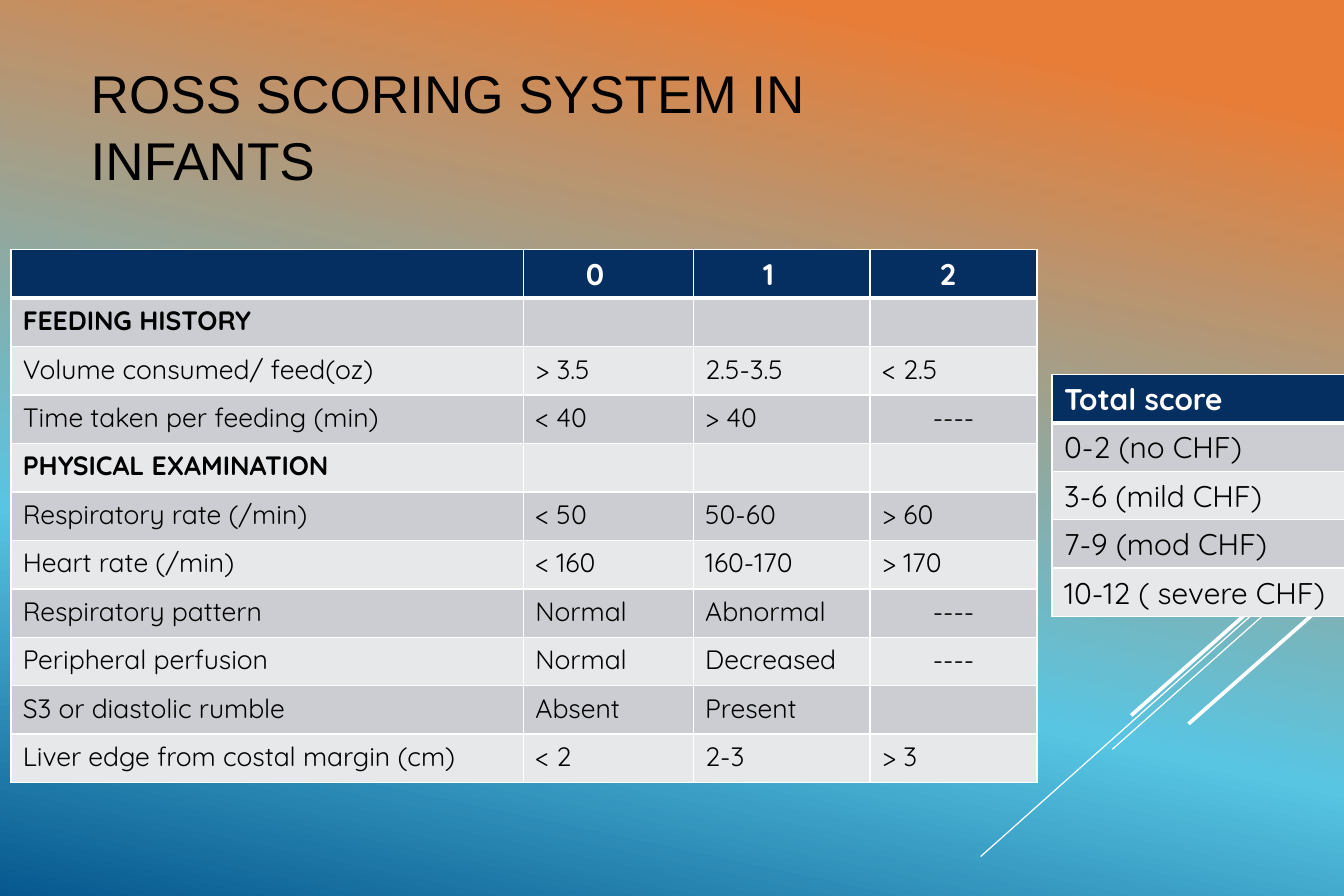
import copy

import lxml.etree
import pptx
import pptx.dml.color
import pptx.enum.shapes
import pptx.enum.text
import pptx.oxml.ns
import pptx.util

Cm = pptx.util.Cm
Pt = pptx.util.Pt
qn = pptx.oxml.ns.qn
RGBColor = pptx.dml.color.RGBColor

WHITE = RGBColor(0xFF, 0xFF, 0xFF)
BLACK = RGBColor(0x00, 0x00, 0x00)
NAVY = RGBColor(0x05, 0x2F, 0x61)
DARK_BAND = RGBColor(0xCC, 0xCD, 0xD2)
LIGHT_BAND = RGBColor(0xE7, 0xE8, 0xEA)
ORANGE = RGBColor(0xE8, 0x7D, 0x37)
SKY = RGBColor(0x58, 0xC5, 0xE3)
OCEAN = RGBColor(0x06, 0x58, 0x8E)


def add_border(cell, side, width):
    properties = cell._tc.get_or_add_tcPr()
    line = lxml.etree.Element(qn("a:ln" + side), w=str(Pt(width)))
    fill = lxml.etree.SubElement(line, qn("a:solidFill"))
    lxml.etree.SubElement(fill, qn("a:srgbClr"), val=str(WHITE))
    properties.insert("LRTB".index(side), line)


def add_score_table(slide, left, top, widths, row_height, rows, body_size, indents):
    shape = slide.shapes.add_table(
        len(rows), len(widths), left, top, sum(widths), row_height * len(rows)
    )
    table = shape.table
    for column, width in zip(table.columns, widths):
        column.width = width
    for row_index, texts in enumerate(rows):
        table.rows[row_index].height = row_height
        is_header = row_index == 0
        is_section = len(texts) == 1 and len(widths) > 1
        band = DARK_BAND if row_index % 2 else LIGHT_BAND
        for column_index in range(len(widths)):
            cell = table.cell(row_index, column_index)
            cell.fill.solid()
            cell.fill.fore_color.rgb = NAVY if is_header else band
            for side in "LRTB":
                under_header = (row_index, side) in ((0, "B"), (1, "T"))
                add_border(cell, side, 3 if under_header else 1)
            text = texts[column_index] if column_index < len(texts) else ""
            if not text:
                continue
            paragraph = cell.text_frame.paragraphs[0]
            run = paragraph.add_run()
            run.text = text
            run.font.color.rgb = WHITE if is_header else BLACK
            cell_font = {
                "name": "Quicksand",
                "size": Pt(18 if is_header else body_size),
                "bold": is_header or is_section,
            }
            for name, value in cell_font.items():
                setattr(run.font, name, value)
            if text in indents:
                paragraph._p.get_or_add_pPr().set("marL", str(indents[text]))


presentation = pptx.Presentation()
presentation.slide_width = Cm(28.575)
presentation.slide_height = Cm(19.05)
slide = presentation.slides.add_slide(presentation.slide_layouts[6])

background = slide.background.fill
background.gradient()
background.gradient_angle = 258
stop_list = next(slide.element.iter(qn("a:gsLst")))
for _ in range(2):
    stop_list.append(copy.deepcopy(stop_list[0]))
gradient = [(0, ORANGE), (0.1, ORANGE), (0.67, SKY), (1, OCEAN)]
for stop, (position, color) in zip(background.gradient_stops, gradient):
    stop.position = position
    stop.color.rgb = color

rays = [
    (28.57, 11.33, 20.85, 18.21, 0.75),
    (28.57, 11.56, 23.65, 15.93, 0.75),
    (28.55, 11.23, 24.05, 15.21, 2.25),
    (28.55, 12.5, 25.27, 15.39, 2.25),
]
for start_x, start_y, end_x, end_y, width in rays:
    ray = slide.shapes.add_connector(
        pptx.enum.shapes.MSO_CONNECTOR.STRAIGHT,
        Cm(start_x), Cm(start_y), Cm(end_x), Cm(end_y),
    )
    ray.line.color.rgb = WHITE
    ray.line.width = Pt(width)
    lxml.etree.SubElement(ray._element.spPr, qn("a:effectLst"))

title = slide.shapes.add_textbox(Cm(1.68), Cm(0.36), Cm(20.47), Cm(4.55))
title_frame = title.text_frame
frame_format = {
    "word_wrap": True,
    "vertical_anchor": pptx.enum.text.MSO_ANCHOR.MIDDLE,
}
for name, value in frame_format.items():
    setattr(title_frame, name, value)
title_paragraph = title_frame.paragraphs[0]
title_paragraph.line_spacing = 1.05
title_run = title_paragraph.add_run()
title_run.text = "ROSS SCORING SYSTEM IN INFANTS"
title_run.font.color.rgb = BLACK
title_font = {"name": "Arial", "size": Pt(32)}
for name, value in title_font.items():
    setattr(title_run.font, name, value)

criteria = [
    ["", "0", "1", "2"],
    ["FEEDING HISTORY"],
    ["Volume consumed/ feed(oz)", "> 3.5", "2.5-3.5", "< 2.5"],
    ["Time taken per feeding (min)", "< 40", "> 40", "----"],
    ["PHYSICAL EXAMINATION"],
    ["Respiratory rate (/min)", "< 50", "50-60", "> 60"],
    ["Heart rate (/min)", "< 160", "160-170", "> 170"],
    ["Respiratory pattern", "Normal", "Abnormal", "----"],
    ["Peripheral perfusion", "Normal", "Decreased", "----"],
    ["S3 or diastolic rumble", "Absent", "Present", ""],
    ["Liver edge from costal margin (cm)", "< 2", "2-3", "> 3"],
]
criteria_widths = [Cm(10.9), Cm(3.61), Cm(3.76), Cm(3.55)]
criteria_indents = {"0": Cm(1.07), "1": Cm(1.23), "2": Cm(1.23), "----": Cm(1.08)}
add_score_table(
    slide, Cm(0.23), Cm(5.31), criteria_widths, Cm(1.03), criteria, 16, criteria_indents
)

totals = [
    ["Total score"],
    ["0-2 (no CHF)"],
    ["3-6 (mild CHF)"],
    ["7-9 (mod CHF)"],
    ["10-12 ( severe CHF)"],
]
add_score_table(slide, Cm(22.37), Cm(7.96), [Cm(6.73)], Cm(1.03), totals, 18, {})

presentation.save("out.pptx")
